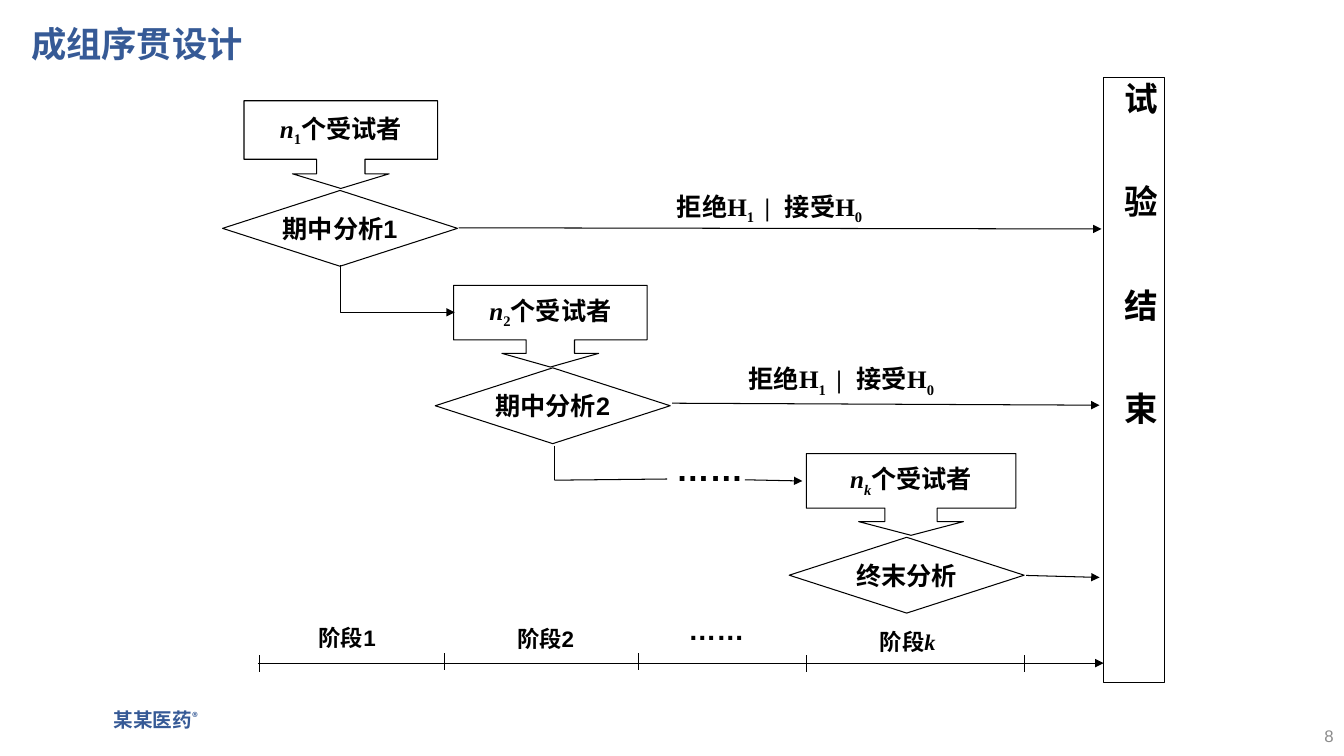
from dataclasses import dataclass

import pptx
import pptx.dml.color
import pptx.enum.shapes
import pptx.enum.text
import pptx.oxml
import pptx.oxml.ns
import pptx.util

Cm = pptx.util.Cm
Pt = pptx.util.Pt
Shape = pptx.enum.shapes.MSO_SHAPE
Align = pptx.enum.text.PP_ALIGN
Anchor = pptx.enum.text.MSO_ANCHOR
qn = pptx.oxml.ns.qn

COLOURS = {"ink": "000000", "brand": "365A96", "number": "8C8C8C"}
CJK_FONT = "Noto Sans CJK SC"
SERIF = "Times New Roman"


@dataclass(frozen=True)
class Piece:
    """One run of text; spacing is extra points after each letter."""
    text: str
    size: float = 18
    font: str = "Arial"
    colour: str = "ink"
    bold: bool = True
    italic: bool = False
    baseline: int = 0
    spacing: float = 0


@dataclass(frozen=True)
class Box:
    left: float
    top: float
    width: float
    height: float

    def lengths(self) -> tuple:
        return Cm(self.left), Cm(self.top), Cm(self.width), Cm(self.height)


@dataclass(frozen=True)
class Stage:
    callout: Box
    index: Piece
    decision: Box
    analysis: str


@dataclass(frozen=True)
class Line:
    start: tuple[float, float]
    end: tuple[float, float]
    arrow: bool = True


@dataclass(frozen=True)
class Label:
    box: Box
    pieces: list[Piece]
    inset: bool = True
    align: Align = Align.LEFT
    anchor: Anchor = Anchor.TOP


def rgb(name: str) -> pptx.dml.color.RGBColor:
    return pptx.dml.color.RGBColor.from_string(COLOURS[name])


def add_pieces(para, pieces: list[Piece], align: Align = Align.LEFT) -> None:
    para.alignment = align
    for piece in pieces:
        span = para.add_run()
        span.text = piece.text
        font = span.font
        font.size, font.name = Pt(piece.size), piece.font
        font.bold, font.italic = piece.bold, piece.italic
        font.color.rgb = rgb(piece.colour)
        properties = span._r.get_or_add_rPr()
        if piece.baseline:
            properties.set("baseline", str(piece.baseline * 1000))
        if piece.spacing:
            properties.set("spc", str(int(piece.spacing * 100)))
        east_asian = pptx.oxml.parse_xml(
            f'<a:ea {pptx.oxml.ns.nsdecls("a")} typeface="{CJK_FONT}"/>')
        properties.find(qn("a:latin")).addnext(east_asian)


def set_insets(frame, left: float, top: float, right: float, bottom: float) -> None:
    frame.margin_left, frame.margin_top = Cm(left), Cm(top)
    frame.margin_right, frame.margin_bottom = Cm(right), Cm(bottom)


def add_outline(page, kind: Shape, box: Box):
    shape = page.shapes.add_shape(kind, *box.lengths())
    shape.shadow.inherit = False
    shape.fill.background()
    shape.line.color.rgb = rgb("ink")
    shape.line.width = Pt(0.75)
    return shape


def add_centred_text(shape, pieces: list[Piece]) -> None:
    frame = shape.text_frame
    frame.word_wrap = False
    frame.vertical_anchor = Anchor.MIDDLE
    add_pieces(frame.paragraphs[0], pieces, Align.CENTER)


def add_stage(page, stage: Stage) -> None:
    box = stage.callout
    callout = add_outline(page, Shape.DOWN_ARROW_CALLOUT, box)
    shaft = box.width / 4 / box.height
    for number, value in enumerate((shaft, shaft, 0.167, 0.667)):
        callout.adjustments[number] = value
    add_centred_text(callout, [Piece("n", font=SERIF, italic=True), stage.index,
                               Piece("个受试者", font=SERIF)])
    decision = add_outline(page, Shape.FLOWCHART_DECISION, stage.decision)
    add_centred_text(decision, [Piece(stage.analysis)])


def add_label(page, label: Label) -> None:
    frame = page.shapes.add_textbox(*label.box.lengths()).text_frame
    frame.word_wrap = True
    frame.vertical_anchor = label.anchor
    if not label.inset:
        set_insets(frame, 0, 0, 0, 0)
    add_pieces(frame.paragraphs[0], label.pieces, label.align)


def add_line(page, line: Line):
    kind = pptx.enum.shapes.MSO_CONNECTOR.STRAIGHT
    ends = [Cm(value) for value in (*line.start, *line.end)]
    connector = page.shapes.add_connector(kind, *ends)
    connector.line.color.rgb = rgb("ink")
    connector.line.width = Pt(0.75)
    names = pptx.oxml.ns.nsdecls("a")
    if line.arrow:
        head = pptx.oxml.parse_xml(f'<a:tailEnd {names} type="triangle"/>')
        connector.line._get_or_add_ln().append(head)
    connector._element.spPr.append(pptx.oxml.parse_xml(f"<a:effectLst {names}/>"))
    return connector


def add_elbow(page, line: Line) -> None:
    """Draw a connector that goes down first and then right."""
    connector = add_line(page, line)
    (left, top), (right, bottom) = line.start, line.end
    width, height = bottom - top, right - left
    connector.left = Cm((left + right - width) / 2)
    connector.top = Cm((top + bottom - height) / 2)
    connector.width, connector.height = Cm(width), Cm(height)
    properties = connector._element.spPr
    properties.find(qn("a:prstGeom")).set("prst", "bentConnector2")
    frame = properties.find(qn("a:xfrm"))
    frame.set("rot", str(270 * 60000))
    frame.set("flipH", "1")


def add_title(page, text: str) -> None:
    title = page.shapes.title
    title.left, title.top, title.width, title.height = Box(0.53, 0.56, 29.21, 1.22).lengths()
    title.text_frame.vertical_anchor = Anchor.MIDDLE
    para = title.text_frame.paragraphs[0]
    para.line_spacing = 0.9
    add_pieces(para, [Piece(text, 25.2, "Montserrat", "brand")])


def add_trial_end(page) -> None:
    frame = add_outline(page, Shape.RECTANGLE, Box(27.81, 1.96, 1.55, 15.24)).text_frame
    frame.word_wrap = True
    frame.vertical_anchor = Anchor.TOP
    set_insets(frame, 0.36, 0, 0, 0)
    for number, letter in enumerate("试验结束"):
        para = frame.add_paragraph() if number else frame.paragraphs[0]
        para.space_before = Pt(45 if number else 0)
        add_pieces(para, [Piece(letter, 24)], Align.CENTER)


def subscript(text: str, italic: bool = False) -> Piece:
    return Piece(text, font=SERIF, italic=italic, baseline=-25)


STAGES = [
    Stage(Box(6.15, 2.54, 4.88, 2.21), subscript("1"), Box(5.61, 4.8, 5.92, 1.91), "期中分析1"),
    Stage(Box(11.43, 7.19, 4.88, 2.06), subscript("2"), Box(10.97, 9.27, 5.92, 1.91), "期中分析2"),
    Stage(Box(20.32, 11.43, 5.28, 2.06), subscript("k", True), Box(19.89, 13.54, 5.92, 1.91),
          "终末分析"),
]
DECISION = [Piece("拒绝H", font=SERIF), subscript("1"), Piece(" | ", font=SERIF, spacing=3),
            Piece("接受H", font=SERIF), subscript("0")]
LABELS = [
    Label(Box(16.81, 4.7, 5.92, 1.02), DECISION),
    Label(Box(18.62, 9.04, 5.92, 1.02), DECISION),
    Label(Box(16.79, 11.15, 3.38, 1.27), [Piece("……", 24)]),
    Label(Box(8.03, 15.72, 1.91, 0.69), [Piece("阶段1", 16)], inset=False),
    Label(Box(13.03, 15.75, 1.91, 0.69), [Piece("阶段2", 16)], inset=False),
    Label(Box(17.35, 15.44, 1.91, 0.86), [Piece("……", 20)], inset=False),
    Label(Box(22.17, 15.82, 1.91, 0.69),
          [Piece("阶段", 16), Piece("k", 16, SERIF, italic=True)], inset=False),
    Label(Box(1.35, 17.58, 3.89, 1.12),
          [Piece("某某医药", 14, CJK_FONT, "brand"),
           Piece("®", 14, CJK_FONT, "brand", baseline=30)],
          align=Align.RIGHT, anchor=Anchor.MIDDLE),
    Label(Box(26.24, 18.03, 7.62, 1.02), [Piece("8", 12, colour="number", bold=False)],
          align=Align.RIGHT, anchor=Anchor.MIDDLE),
]
TICKS = [(6.55, 16.51), (11.2, 16.46), (16.1, 16.46), (20.32, 16.51), (25.83, 16.51)]
LINES = [
    Line((6.5, 16.71), (27.81, 16.71)),
    Line((11.56, 5.74), (27.76, 5.77)),
    Line((16.94, 10.16), (27.71, 10.21)),
    Line((13.97, 11.23), (13.97, 12.1), arrow=False),
    Line((13.97, 12.1), (16.81, 12.07), arrow=False),
    Line((18.77, 12.09), (20.22, 12.12)),
    Line((25.86, 14.5), (27.71, 14.55)),
    *(Line((x, y), (x, y + 0.43), arrow=False) for x, y in TICKS),
]


def main() -> None:
    deck = pptx.Presentation()
    deck.slide_width, deck.slide_height = Cm(33.87), Cm(19.05)
    page = deck.slides.add_slide(deck.slide_layouts[5])
    add_title(page, "成组序贯设计")
    add_trial_end(page)
    for stage in STAGES:
        add_stage(page, stage)
    for line in LINES:
        add_line(page, line)
    add_elbow(page, Line((8.59, 6.68), (11.46, 7.87)))
    for label in LABELS:
        add_label(page, label)
    deck.save("out.pptx")


if __name__ == "__main__":
    main()
